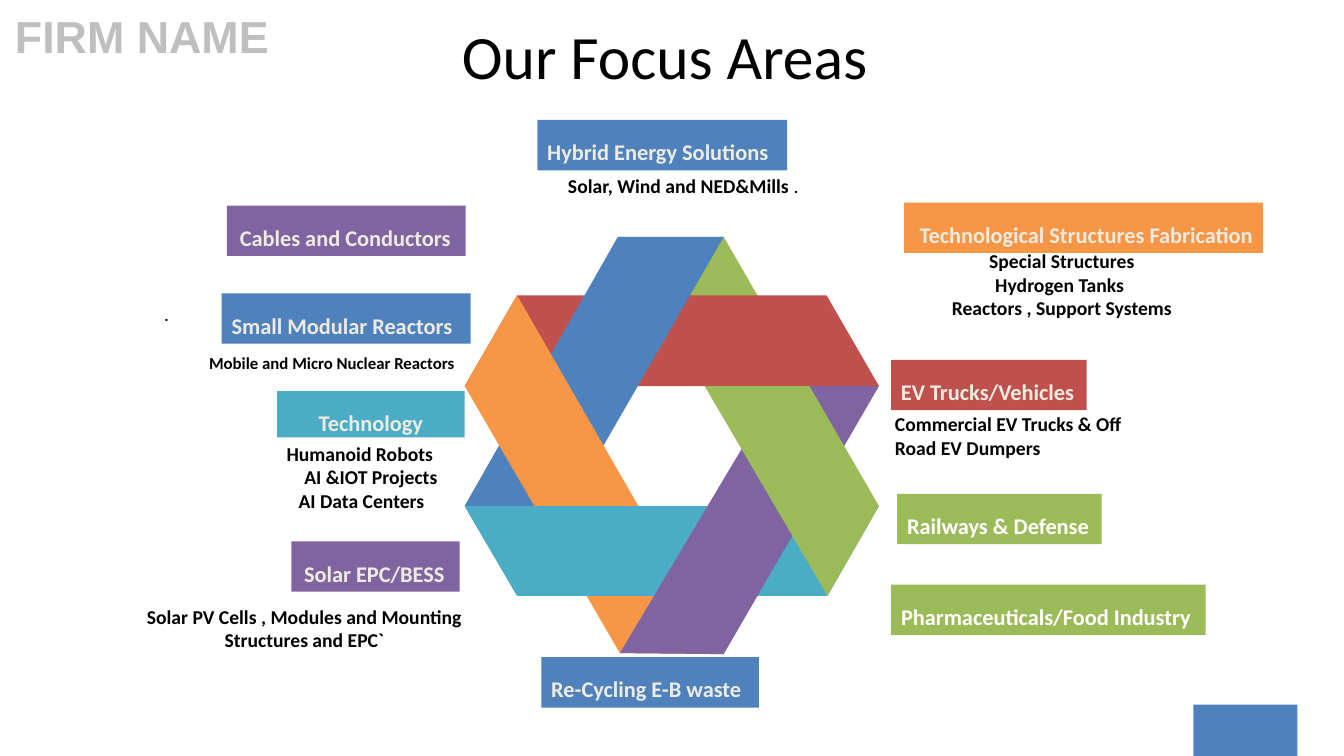
import pptx
import pptx.util
import pptx.dml.color
import pptx.enum.text

COLS, ROWS = 133.33, 75
INK = {
    "blue": "4F81BD", "red": "C0504D", "green": "9BBB59", "purple": "8064A2",
    "teal": "4BACC6", "orange": "F79646", "cream": "EEECE1", "white": "FFFFFF",
    "black": "000000", "gray": "BFBFBF",
}
ALIGN = {
    "left": pptx.enum.text.PP_ALIGN.LEFT,
    "center": pptx.enum.text.PP_ALIGN.CENTER,
    "right": pptx.enum.text.PP_ALIGN.RIGHT,
}


def unit(count):
    return pptx.util.Inches(count / 10)


def color(name):
    return pptx.dml.color.RGBColor.from_string(INK[name])


def write(frame, lines, size=14, font="Calibri", ink="black", bold=True,
          align="left", space=None, anchor="TOP", ends=()):
    frame.word_wrap = True
    frame.auto_size = pptx.enum.text.MSO_AUTO_SIZE.NONE
    frame.vertical_anchor = pptx.enum.text.MSO_ANCHOR[anchor]
    for index, line in enumerate(lines):
        para = frame.paragraphs[0] if index == 0 else frame.add_paragraph()
        para.alignment = ALIGN[align]
        if space:
            para.line_spacing = space
        if index < len(ends) and ends[index]:
            para._p.get_or_add_pPr().set("marR", str(unit(ends[index])))
        parts = [(line, bold)] if isinstance(line, str) else line
        for words, heavy in parts:
            run = para.add_run()
            run.text = words
            run.font.size = pptx.util.Pt(size)
            run.font.name = font
            run.font.bold = heavy
            run.font.color.rgb = color(ink)


class Deck:
    def __init__(self):
        self.show = pptx.Presentation()
        self.show.slide_width = unit(COLS)
        self.show.slide_height = unit(ROWS)
        self.slide = self.show.slides.add_slide(self.show.slide_layouts[5])

    def title(self, area, words):
        head = self.slide.shapes.title
        head.left, head.top, head.width, head.height = map(unit, area)
        write(head.text_frame, [words], size=44, bold=False,
              align="center", anchor="MIDDLE")

    def note(self, area, *lines, **style):
        box = self.slide.shapes.add_textbox(*map(unit, area))
        write(box.text_frame, lines, **style)

    def paint(self, shape, fill):
        shape.shadow.inherit = False
        shape.fill.solid()
        shape.fill.fore_color.rgb = color(fill)
        shape.line.fill.background()

    def label(self, area, fill, words="", ink="cream", align="left"):
        kind = pptx.enum.shapes.MSO_SHAPE.RECTANGLE
        box = self.slide.shapes.add_shape(kind, *map(unit, area))
        self.paint(box, fill)
        if words:
            write(box.text_frame, [words], size=16, ink=ink, align=align, space=1.5)

    def ring(self, bands):
        group = self.slide.shapes.add_group_shape()
        for fill, points in bands:
            spots = [(unit(x), unit(y)) for x, y in points]
            path = group.shapes.build_freeform(*spots[0])
            path.add_line_segments(spots[1:], close=True)
            self.paint(path.convert_to_shape(), fill)


TOP_A, TOP_B = (61.3, 23.5), (71.8, 23.5)
LOW_A, LOW_B = (61.5, 64.8), (71.8, 64.9)
WEST_A, WEST_B = (46.1, 38.3), (46.1, 50.2)
EAST_A, EAST_B = (87.2, 38.3), (87.2, 50.2)
NW, NE, SW, SE = (51.3, 29.3), (82, 29.3), (51.3, 59.1), (82.1, 59.1)

BANDS = [
    ("green", [TOP_A, TOP_B, (75.6, 30.1), (66.9, 33.1)]),
    ("red", [NW, NE, EAST_A, WEST_A]),
    ("blue", [TOP_A, TOP_B, SW, WEST_B]),
    ("orange", [NW, LOW_B, LOW_A, WEST_A]),
    ("teal", [WEST_B, EAST_B, SE, SW]),
    ("purple", [(77.3, 38.3), EAST_A, LOW_B, LOW_A]),
    ("green", [(69.9, 38.3), (80.3, 38.3), EAST_B, SE]),
]

LABELS = [
    ((89.7, 20.1, 35.6, 5), "orange", "Technological Structures Fabrication", "cream", "right"),
    ((27.5, 38.8, 18.6, 4.6), "teal", "Technology", "cream", "center"),
    ((28.9, 53.7, 16.7, 5), "purple", "Solar EPC/BESS ", "cream", "right"),
    ((88.4, 35.7, 19.4, 5), "red", "EV Trucks/Vehicles"),
    ((89, 49, 20.3, 5), "green", "Railways & Defense", "white"),
    ((53.3, 11.9, 24.8, 5), "blue", "Hybrid Energy Solutions"),
    ((22, 29.1, 24.7, 5), "blue", "Small Modular Reactors"),
    ((22.5, 20.4, 23.7, 5), "purple", "Cables and Conductors ", "cream", "right"),
    ((88.4, 58, 31.2, 5), "green", "Pharmaceuticals/Food Industry", "white"),
    ((53.7, 65.2, 21.6, 5), "blue", "Re-Cycling E-B waste"),
    ((118.4, 69.9, 10.3, 5.1), "blue"),
]


def main():
    deck = Deck()
    deck.title((10.5, 0.9, 112.3, 9.1), "Our Focus Areas ")
    deck.ring(BANDS)
    for label in LABELS:
        deck.label(*label)
    deck.note((0.5, 0.4, 29.1, 6.4), "FIRM NAME", size=32, font="Arial", ink="gray")
    deck.note((89.7, 24.2, 31.3, 8.1), "Special Structures", "Hydrogen Tanks ",
              "Reactors , Support Systems", align="center")
    deck.note((14.6, 43.3, 29.8, 8.1), "Humanoid Robots ", "AI &IOT Projects",
              "AI Data Centers", align="right", ends=(0, 0, 1.3))
    deck.note((12.4, 59.5, 35.6, 5.7),
              "Solar PV Cells , Modules and Mounting Structures and EPC`", align="center")
    deck.note((87.8, 40.4, 27.4, 5.7), "Commercial EV Trucks & Off Road EV Dumpers")
    deck.note((49.9, 16.8, 36.2, 3.4),
              [("Solar, Wind and NED&Mills ", True), (". ", False)], align="center")
    deck.note((15.3, 29.5, 33.1, 3.4), ".", bold=False)
    deck.note((17, 34.5, 29.1, 3), "Mobile and Micro Nuclear Reactors",
              size=12, align="right")
    deck.show.save("out.pptx")


if __name__ == "__main__":
    main()
